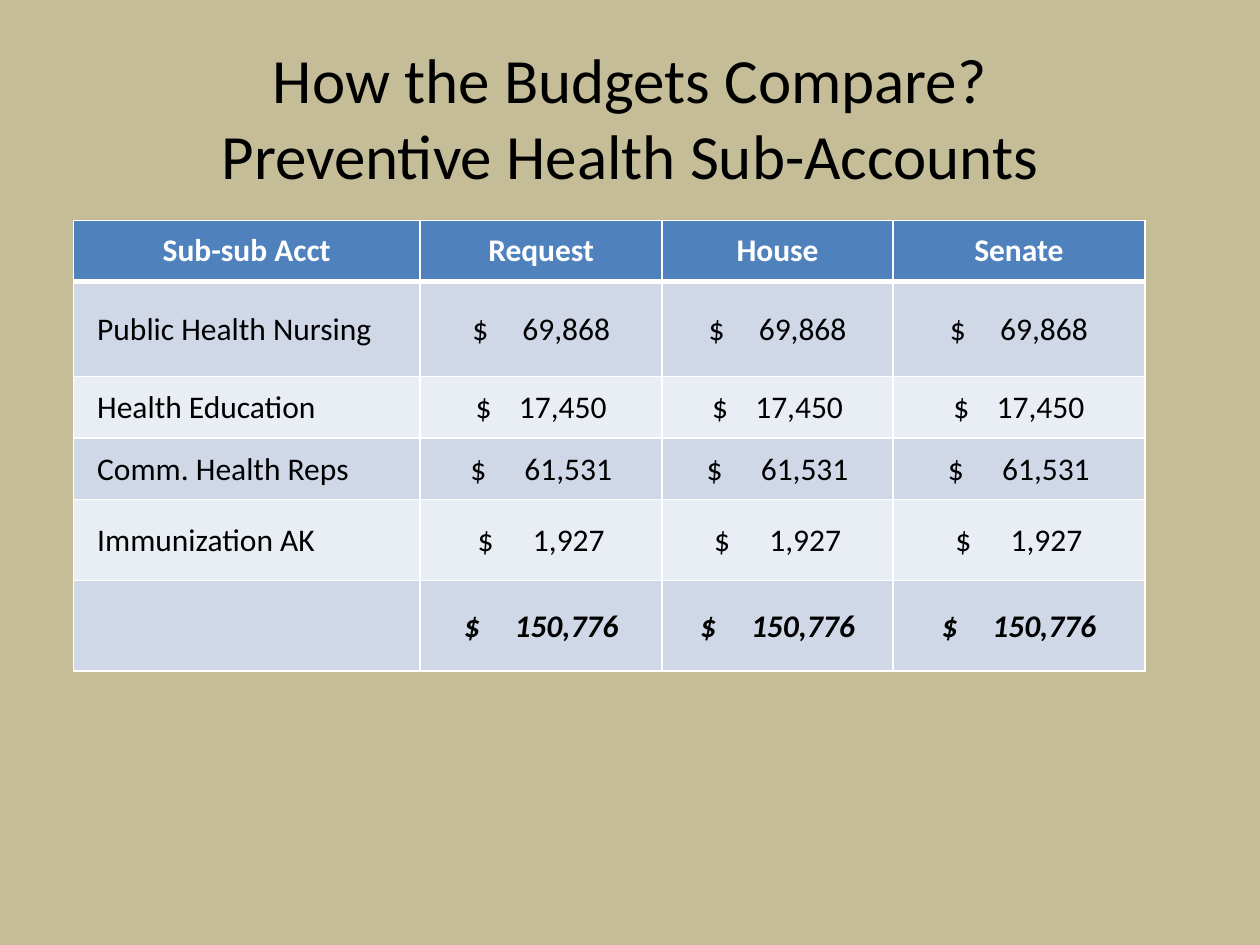
from lxml.etree import SubElement
from pptx import Presentation
from pptx.dml.color import RGBColor as RGB
from pptx.enum.text import MSO_ANCHOR as ANCHOR, PP_ALIGN as ALIGN
from pptx.oxml.ns import qn
from pptx.util import Cm, Pt

TITLE = "How the Budgets Compare?\vPreventive Health Sub-Accounts"
HEADERS = ["Sub-sub Acct", "Request", "House", "Senate"]
ROWS = [
    {"label": "Public Health Nursing", "amount": "69,868", "height": 1.91, "span": 2.78},
    {"label": "Health Education", "amount": "17,450", "height": 1.24, "span": 2.64},
    {"label": "Comm. Health Reps", "amount": "61,531", "height": 1.24, "span": 2.86},
    {"label": "Immunization AK", "amount": "1,927", "height": 1.63, "span": 2.56},
    {"label": "", "amount": "150,776", "height": 1.83, "span": 3.12},
]
COL_WIDTHS = [6.99, 4.88, 4.65, 5.08]
HEADER_HEIGHT = 1.24
THEME = {
    "font": "Calibri",
    "background": "C4BD97",
    "header": "4F81BD",
    "bands": ["D0D8E8", "E9EDF4"],
    "border": "FFFFFF",
    "light": "FFFFFF",
    "dark": "000000",
    "title_size": 36,
    "table_size": 18,
}
HEADER_MARGINS = {f"margin_{side}": Cm(0.13) for side in ("left", "right", "top", "bottom")}
BODY_MARGINS = {"margin_left": Cm(0.48), "margin_right": Cm(0.03),
                "margin_top": Cm(0.03), "margin_bottom": 0}


def apply(target, values):
    for name, value in values.items():
        setattr(target, name, value)


def write(p, text, size, color, bold=False, italic=False):
    p.text = text
    for r in p.runs:
        apply(r.font, {"name": THEME["font"], "size": Pt(size),
                       "bold": bold, "italic": italic})
        r.font.color.rgb = RGB.from_string(color)


def draw_borders(cell, row):
    tc_pr = cell._tc.get_or_add_tcPr()
    heavy = {0: "lnB", 1: "lnT"}.get(row)
    for edge in ("lnL", "lnR", "lnT", "lnB"):
        width = Pt(3 if edge == heavy else 1)
        ln = SubElement(tc_pr, qn(f"a:{edge}"), w=str(width))
        fill = SubElement(ln, qn("a:solidFill"))
        SubElement(fill, qn("a:srgbClr"), val=THEME["border"])


def format_cell(cell, row, fill, margins):
    draw_borders(cell, row)
    cell.fill.solid()
    cell.fill.fore_color.rgb = RGB.from_string(fill)
    apply(cell, {"vertical_anchor": ANCHOR.MIDDLE, **margins})
    return cell.text_frame.paragraphs[0]


def add_right_tab(p, position):
    tabs = SubElement(p._p.get_or_add_pPr(), qn("a:tabLst"))
    SubElement(tabs, qn("a:tab"), pos=str(Cm(position)), algn="r")


def add_title(s):
    tf = s.shapes.add_textbox(Cm(1.27), Cm(0.76), Cm(22.86), Cm(3.18)).text_frame
    apply(tf, {"word_wrap": True, "vertical_anchor": ANCHOR.MIDDLE})
    p = tf.paragraphs[0]
    p.alignment = ALIGN.CENTER
    write(p, TITLE, THEME["title_size"], THEME["dark"])


def add_budget_table(s):
    heights = [HEADER_HEIGHT] + [row["height"] for row in ROWS]
    table = s.shapes.add_table(len(heights), len(COL_WIDTHS), Cm(1.48), Cm(4.44),
                               Cm(sum(COL_WIDTHS)), Cm(sum(heights))).table
    apply(table, {"first_row": False, "horz_banding": False})
    for column, width in zip(table.columns, COL_WIDTHS):
        column.width = Cm(width)
    for line, height in zip(table.rows, heights):
        line.height = Cm(height)

    size = THEME["table_size"]
    for c, header in enumerate(HEADERS):
        p = format_cell(table.cell(0, c), 0, THEME["header"], HEADER_MARGINS)
        p.alignment = ALIGN.CENTER
        write(p, header, size, THEME["light"], bold=True)

    for i, row in enumerate(ROWS, start=1):
        band = THEME["bands"][(i - 1) % 2]
        total = i == len(ROWS)
        for c, width in enumerate(COL_WIDTHS):
            margins = dict(BODY_MARGINS)
            if c:
                margins["margin_left"] = Cm((width - row["span"]) / 2)
            p = format_cell(table.cell(i, c), i, band, margins)
            text = f"$\t{row['amount']}" if c else row["label"]
            write(p, text, size, THEME["dark"], bold=total, italic=total)
            if c:
                add_right_tab(p, row["span"])


def main():
    prs = Presentation()
    apply(prs, {"slide_width": Cm(25.4), "slide_height": Cm(19.05)})
    s = prs.slides.add_slide(prs.slide_layouts[6])
    s.background.fill.solid()
    s.background.fill.fore_color.rgb = RGB.from_string(THEME["background"])
    add_title(s)
    add_budget_table(s)
    prs.save("out.pptx")


if __name__ == "__main__":
    main()
